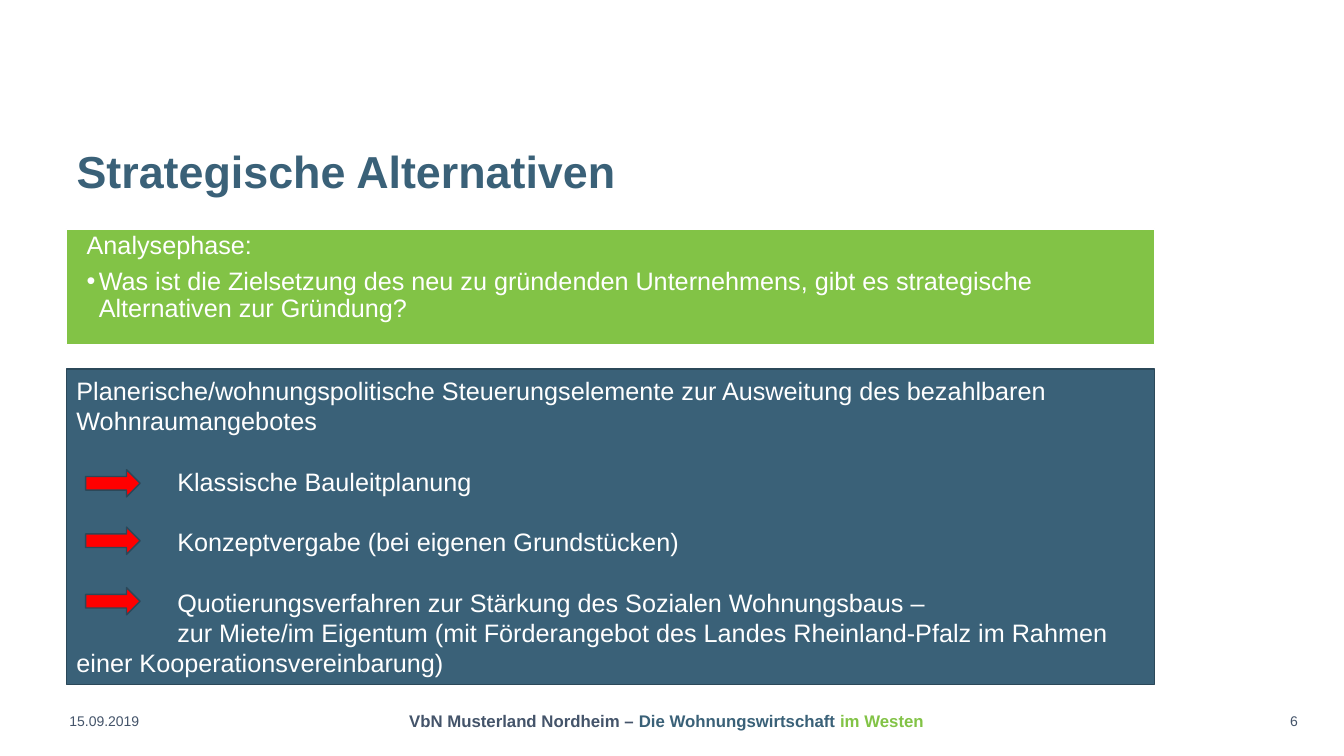
from dataclasses import dataclass

from lxml.etree import SubElement
from pptx import Presentation
from pptx.dml.color import RGBColor
from pptx.enum.shapes import MSO_SHAPE
from pptx.enum.text import MSO_ANCHOR, MSO_AUTO_SIZE, PP_ALIGN
from pptx.oxml.ns import qn
from pptx.util import Inches, Pt


@dataclass(frozen=True)
class Theme:
    font: str = "Arial"
    blue: str = "3A6178"
    green: str = "82C346"
    slate: str = "44546A"
    edge: str = "2B4859"
    red: str = "FF0000"
    white: str = "FFFFFF"
    title: int = 32
    body: int = 18
    foot: int = 12
    small: int = 10


THEME = Theme()


@dataclass(frozen=True)
class Box:
    left: float
    top: float
    width: float
    height: float

    def place(self):
        return [Inches(v) for v in (self.left, self.top, self.width, self.height)]


def write(para, text, size=THEME.body, color=THEME.white, bold=False,
          align=PP_ALIGN.LEFT, line=None, before=0, after=0,
          margin=0, indent=0, bullet=None):
    """Add one run to a paragraph and set the paragraph's format."""
    run = para.add_run()
    run.text = text
    run.font.name, run.font.size, run.font.bold = THEME.font, Pt(size), bold
    run.font.color.rgb = RGBColor.from_string(color)
    para.alignment = align
    para.space_before, para.space_after = Pt(before), Pt(after)
    if line:
        para.line_spacing = line
    props = para._p.get_or_add_pPr()
    props.set("marL", str(Inches(margin)))
    props.set("indent", str(Inches(indent)))
    if bullet:
        SubElement(props, qn("a:buFont")).set("typeface", THEME.font)
        SubElement(props, qn("a:buChar")).set("char", bullet)


def set_frame(frame, anchor):
    frame.word_wrap = True
    frame.auto_size = MSO_AUTO_SIZE.NONE
    frame.vertical_anchor = anchor


def add_shape(slide, kind, box, fill, edge):
    shape = slide.shapes.add_shape(kind, *box.place())
    shape.shadow.inherit = False
    shape.fill.solid()
    shape.fill.fore_color.rgb = RGBColor.from_string(fill)
    shape.line.color.rgb = RGBColor.from_string(edge)
    shape.line.width = Pt(1)
    return shape


def add_title(slide, box, text):
    title = slide.shapes.title
    title.left, title.top, title.width, title.height = box.place()
    set_frame(title.text_frame, MSO_ANCHOR.BOTTOM)
    write(title.text_frame.paragraphs[0], text, size=THEME.title,
          color=THEME.blue, bold=True, line=0.9)


def add_phase(slide, box, head, point):
    """Green panel with a heading and one bullet."""
    panel = add_shape(slide, MSO_SHAPE.RECTANGLE, box, THEME.green, THEME.white)
    frame = panel.text_frame
    set_frame(frame, MSO_ANCHOR.TOP)
    frame.margin_left = Inches(0.2)
    frame.margin_top = frame.margin_right = frame.margin_bottom = Inches(0.04)
    write(frame.paragraphs[0], head, line=0.9, after=6)
    write(frame.add_paragraph(), point, line=0.9, margin=0.12, indent=-0.12,
          bullet="•")


def add_tools(slide, box, head, items):
    """Blue panel with a heading and items marked by arrows.

    Each item is the arrow's offset from the panel top and its paragraphs.
    """
    panel = add_shape(slide, MSO_SHAPE.RECTANGLE, box, THEME.blue, THEME.edge)
    frame = panel.text_frame
    set_frame(frame, MSO_ANCHOR.MIDDLE)
    write(frame.paragraphs[0], head)
    for drop, lines in items:
        for i, text in enumerate(lines):
            write(frame.add_paragraph(), text, indent=1,
                  before=0 if i else 21.6)
        spot = Box(box.left + 0.19, box.top + drop, 0.54, 0.27)
        add_shape(slide, MSO_SHAPE.RIGHT_ARROW, spot, THEME.red, THEME.edge)


def add_note(slide, box, runs, **style):
    """Footer text made of (text, colour) runs."""
    frame = slide.shapes.add_textbox(*box.place()).text_frame
    set_frame(frame, MSO_ANCHOR.MIDDLE)
    for text, color in runs:
        write(frame.paragraphs[0], text, color=color, **style)


def add_footer(slide, top, date, name, page):
    add_note(slide, Box(0.59, top, 1.03, 0.4), [(date, THEME.slate)],
             size=THEME.small)
    add_note(slide, Box(3.79, top, 5.64, 0.4), name, size=THEME.foot,
             bold=True, align=PP_ALIGN.CENTER)
    add_note(slide, Box(12.04, top, 0.93, 0.4), [(page, THEME.slate)],
             size=THEME.small, align=PP_ALIGN.RIGHT)


def main():
    deck = Presentation()
    deck.slide_width, deck.slide_height = Inches(13.33), Inches(7.5)
    slide = deck.slides.add_slide(deck.slide_layouts[5])

    add_title(slide, Box(0.66, 0.38, 10.3, 1.64), "Strategische Alternativen")
    add_phase(slide, Box(0.66, 2.27, 10.79, 1.15), "Analysephase:",
              "Was ist die Zielsetzung des neu zu gründenden Unternehmens, "
              "gibt es strategische Alternativen zur Gründung?")
    add_tools(slide, Box(0.66, 3.66, 10.79, 3.13),
              "Planerische/wohnungspolitische Steuerungselemente zur "
              "Ausweitung des bezahlbaren Wohnraumangebotes",
              [(1.0, ["Klassische Bauleitplanung"]),
               (1.57, ["Konzeptvergabe (bei eigenen Grundstücken)"]),
               (2.17, ["Quotierungsverfahren zur Stärkung des Sozialen "
                       "Wohnungsbaus –",
                       "zur Miete/im Eigentum (mit Förderangebot des Landes "
                       "Rheinland-Pfalz im Rahmen einer "
                       "Kooperationsvereinbarung)"])])
    add_footer(slide, 6.95, "15.09.2019",
               [("VbN Musterland Nordheim – ", THEME.slate),
                ("Die Wohnungswirtschaft ", THEME.blue),
                ("im Westen", THEME.green)], "6")
    deck.save("out.pptx")


if __name__ == "__main__":
    main()
